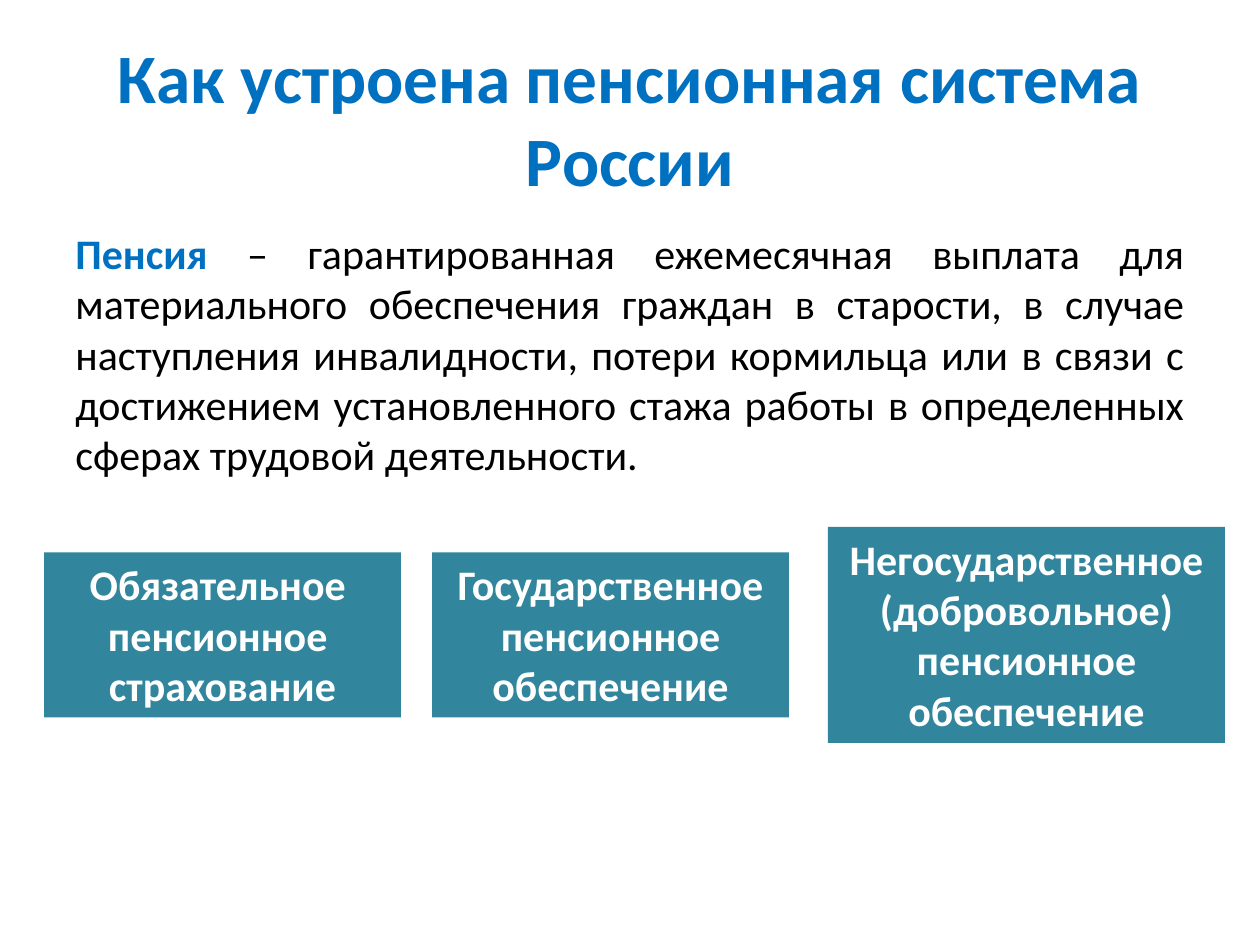
import pptx
import pptx.dml.color
import pptx.enum.shapes
import pptx.enum.text
import pptx.util

PIXEL = 914400 / 126
ALIGN = pptx.enum.text.PP_ALIGN
ANCHOR = pptx.enum.text.MSO_ANCHOR

THEME = {
    "font": "Calibri",
    "accent": "0070C0",
    "text": "000000",
    "panel": "31859C",
    "panel_text": "FFFFFF",
    "title_size": 39.6,
    "body_size": 24,
}


def px(length):
    return pptx.util.Emu(round(length * PIXEL))


def color(name):
    return pptx.dml.color.RGBColor.from_string(THEME[name])


def apply_format(target, values):
    for name, value in values.items():
        setattr(target, name, value)


def write_paragraphs(shape, paragraphs, size, alignment, anchor=ANCHOR.TOP):
    frame = shape.text_frame
    apply_format(frame, {
        "word_wrap": True,
        "vertical_anchor": anchor,
        "auto_size": pptx.enum.text.MSO_AUTO_SIZE.NONE,
    })
    for index, runs in enumerate(paragraphs):
        paragraph = frame.add_paragraph() if index else frame.paragraphs[0]
        paragraph.alignment = alignment
        for text, color_name, bold in runs:
            run = paragraph.add_run()
            run.text = text
            apply_format(run.font, {
                "name": THEME["font"],
                "size": pptx.util.Pt(THEME[size]),
                "bold": bold,
            })
            run.font.color.rgb = color(color_name)


def add_title(slide, box, text):
    shape = slide.shapes.add_textbox(*map(px, box))
    write_paragraphs(shape, [[(text, "accent", True)]], "title_size",
                     ALIGN.CENTER, ANCHOR.MIDDLE)


def add_definition(slide, box, term, meaning):
    shape = slide.shapes.add_textbox(*map(px, box))
    runs = [(term, "accent", True), (meaning, "text", False)]
    write_paragraphs(shape, [runs], "body_size", ALIGN.JUSTIFY)


def add_pension_types(slide, box, panels):
    left, top, width, height = box
    for offset, panel_width, panel_height, lines in panels:
        shape = slide.shapes.add_shape(
            pptx.enum.shapes.MSO_SHAPE.RECTANGLE,
            px(left + offset), px(top + (height - panel_height) / 2),
            px(panel_width), px(panel_height))
        shape.shadow.inherit = False
        shape.fill.solid()
        shape.fill.fore_color.rgb = color("panel")
        shape.line.fill.background()
        write_paragraphs(shape, [[(line, "panel_text", True)] for line in lines],
                         "body_size", ALIGN.CENTER)


def main():
    presentation = pptx.Presentation()
    apply_format(presentation, {"slide_width": px(1260), "slide_height": px(945)})
    slide = presentation.slides.add_slide(presentation.slide_layouts[6])
    add_title(slide, (63, 38, 1134, 158), "Как устроена пенсионная система России")
    add_definition(
        slide, (63, 221, 1134, 282), "Пенсия",
        " – гарантированная ежемесячная выплата для материального обеспечения "
        "граждан в старости, в случае наступления инвалидности, потери кормильца "
        "или в связи с достижением установленного стажа работы в определенных "
        "сферах трудовой деятельности. ")
    add_pension_types(slide, (44, 527, 1181, 216), [
        (0, 357, 165, ["Обязательное ", "пенсионное ", "страхование"]),
        (388, 357, 165, ["Государственное", "пенсионное", "обеспечение"]),
        (784, 397, 216, ["Негосударственное (добровольное)",
                         "пенсионное обеспечение"]),
    ])
    presentation.save("out.pptx")


if __name__ == "__main__":
    main()
